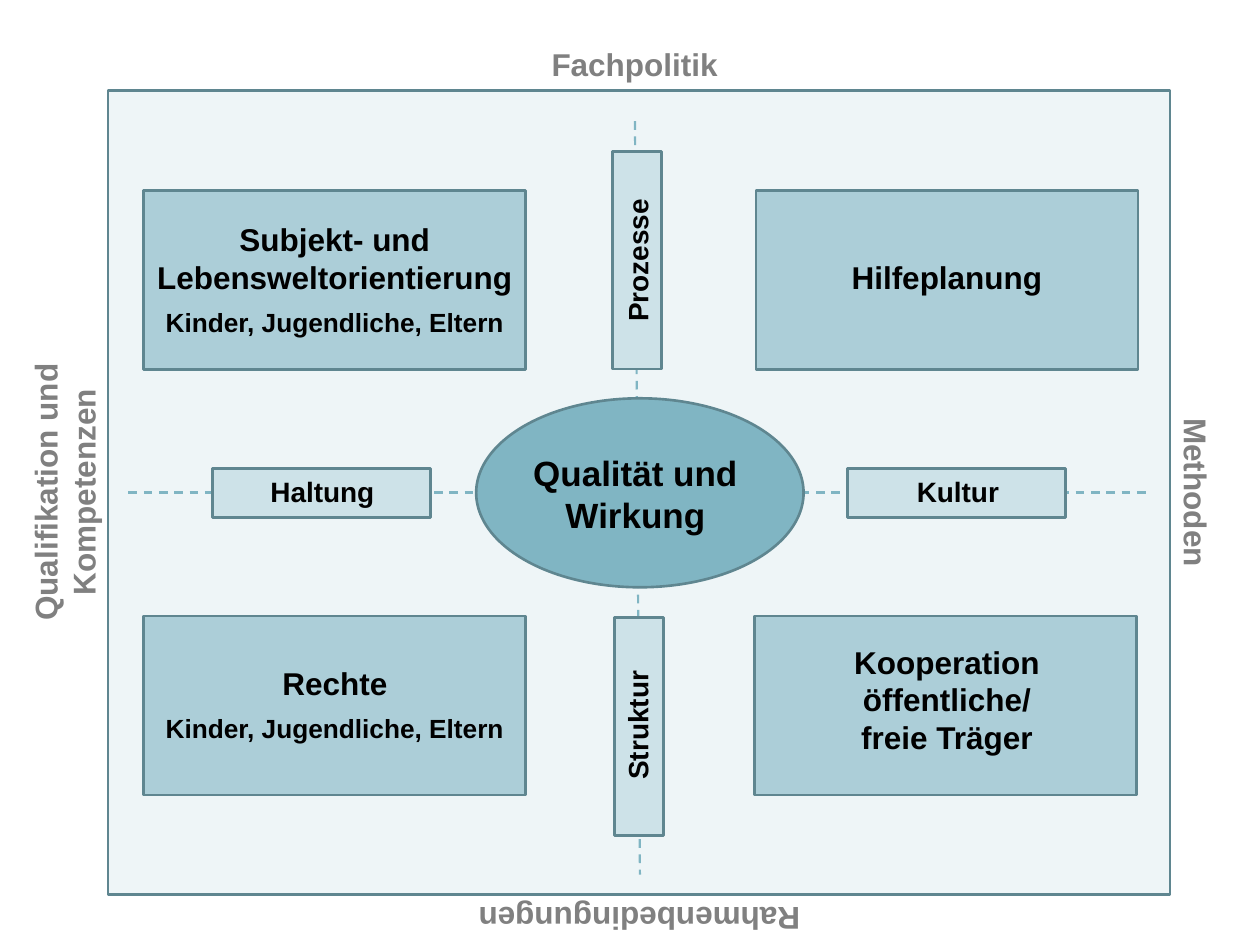
import pptx
import pptx.util
import pptx.dml.color
import pptx.enum.dml
import pptx.enum.shapes
import pptx.enum.text
import lxml.etree
from pptx.util import Cm

RECTANGLE = pptx.enum.shapes.MSO_SHAPE.RECTANGLE
OVAL = pptx.enum.shapes.MSO_SHAPE.OVAL
BLACK, GREY = "000000", "808080"
OUTLINE, PALE, LIGHT, MEDIUM, DARK = "5F8690", "EEF5F7", "CDE2E8", "ACCED8", "80B5C3"


def color(value):
    return pptx.dml.color.RGBColor.from_string(value)


presentation = pptx.Presentation()
presentation.slide_width = Cm(25.4)
presentation.slide_height = Cm(19.05)
slide = presentation.slides.add_slide(presentation.slide_layouts[6])


def add_shape(kind, left, top, width, height, fill, rotation=0):
    shape = slide.shapes.add_shape(kind, Cm(left), Cm(top), Cm(width), Cm(height))
    shape.rotation = rotation
    shape.shadow.inherit = False
    shape.fill.solid()
    shape.fill.fore_color.rgb = color(fill)
    shape.line.color.rgb = color(OUTLINE)
    shape.line.width = pptx.util.Pt(1.5)


add_shape(RECTANGLE, 2.18, 1.83, 21.41, 16.21, PALE)

axes = [(2.59, 9.93, 23.19, 9.93), (12.8, 2.44, 12.9, 17.63)]
for start_x, start_y, end_x, end_y in axes:
    axis = slide.shapes.add_connector(
        pptx.enum.shapes.MSO_CONNECTOR.STRAIGHT,
        Cm(start_x), Cm(start_y), Cm(end_x), Cm(end_y))
    axis.line.color.rgb = color(DARK)
    axis.line.width = pptx.util.Pt(1.25)
    axis.line.dash_style = pptx.enum.dml.MSO_LINE.DASH
    lxml.etree.SubElement(
        axis._element.spPr, pptx.oxml.ns.qn("a:effectLst"))

for left, top in [(15.24, 3.84), (2.9, 3.84), (2.9, 12.42), (15.21, 12.42)]:
    add_shape(RECTANGLE, left, top, 7.7, 3.61, MEDIUM)

add_shape(OVAL, 9.6, 8.03, 6.6, 3.81, DARK)

labels = [(4.29, 9.45, 0), (17.09, 9.45, 0), (10.64, 4.75, 90), (10.69, 14.15, 90)]
for left, top, rotation in labels:
    add_shape(RECTANGLE, left, top, 4.39, 0.99, LIGHT, rotation)

audience = "Kinder, Jugendliche, Eltern"
texts = [
    (["Fachpolitik"], 10.8, 0.79, 3.99, 1.02, 0, 18, GREY),
    (["Hilfeplanung"], 16.69, 5.08, 4.8, 1.02, 0, 18, BLACK),
    (["Subjekt- und Lebensweltorientierung", audience], 2.9, 4.32, 7.7, 2.64, 0, 18, BLACK),
    (["Rechte", audience], 2.9, 13.26, 7.7, 1.88, 0, 18, BLACK),
    (["Kooperation öffentliche/ freie Träger"], 16.69, 12.83, 4.8, 2.57, 0, 18, BLACK),
    (["Qualität und Wirkung"], 10.41, 8.97, 4.8, 1.96, 0, 20, BLACK),
    (["Haltung"], 5, 9.45, 3, 0.94, 0, 16, BLACK),
    (["Kultur"], 17.81, 9.45, 3, 0.94, 0, 16, BLACK),
    (["Struktur"], 11.35, 14.15, 3, 0.94, 270, 16, BLACK),
    (["Prozesse"], 11.35, 4.78, 3, 0.94, 270, 16, BLACK),
    (["Rahmenbedingungen"], 9.09, 18.03, 7.59, 1.02, 180, 18, GREY),
    (["Qualifikation und Kompetenzen"], -2.49, 9.02, 7.59, 1.8, 270, 18, GREY),
    (["Methoden"], 20.32, 9.42, 7.59, 1.02, 90, 18, GREY),
]
for lines, left, top, width, height, rotation, size, font_color in texts:
    box = slide.shapes.add_textbox(Cm(left), Cm(top), Cm(width), Cm(height))
    box.rotation = rotation
    frame = box.text_frame
    frame.word_wrap = True
    frame.auto_size = pptx.enum.text.MSO_AUTO_SIZE.SHAPE_TO_FIT_TEXT
    frame.text = "\n".join(lines)
    for index, paragraph in enumerate(frame.paragraphs):
        paragraph.alignment = pptx.enum.text.PP_ALIGN.CENTER
        if index:
            paragraph.space_before = pptx.util.Pt(6)
        paragraph.font.name = "Arial"
        paragraph.font.size = pptx.util.Pt(15 if index else size)
        paragraph.font.bold = True
        paragraph.font.color.rgb = color(font_color)

presentation.save("out.pptx")
